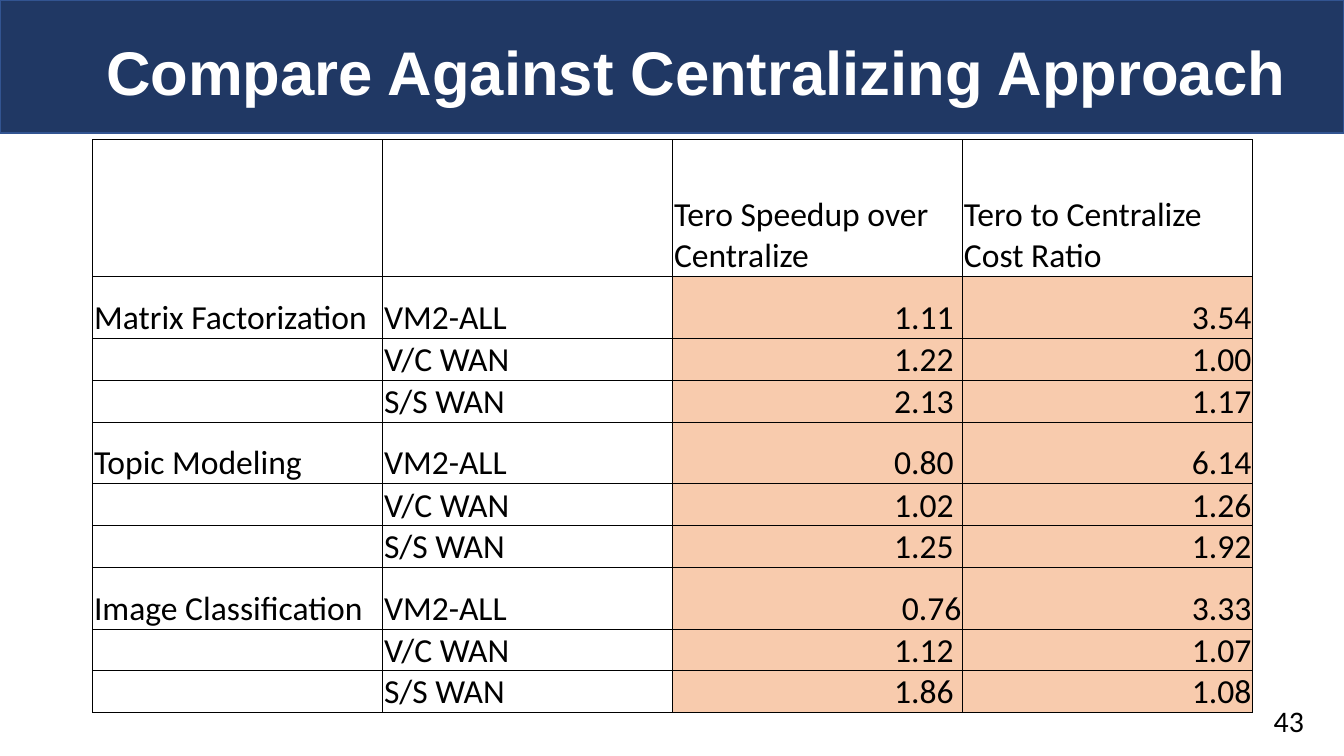
from lxml import etree
from pptx import Presentation
from pptx.dml.color import RGBColor
from pptx.enum.shapes import MSO_SHAPE
from pptx.enum.text import MSO_ANCHOR, PP_ALIGN
from pptx.oxml.ns import qn
from pptx.util import Inches, Pt

RECT = MSO_SHAPE.RECTANGLE
MIDDLE, BOTTOM = MSO_ANCHOR.MIDDLE, MSO_ANCHOR.BOTTOM
LEFT, RIGHT = PP_ALIGN.LEFT, PP_ALIGN.RIGHT

WIDE = 10
HIGH = WIDE * 9 / 16
EDGE = 0.69
COL, HEAD, TALL, LOW = 8.63 / 4, 1.02, 0.46, 0.31
COLOURS = {"navy": "203864", "line": "325491", "white": "FFFFFF",
           "black": "000000", "peach": "F8CBAD"}

HEADS = ["", "", "Tero Speedup over Centralize", "Tero to Centralize Cost Ratio"]
SETUPS = ["VM2-ALL", "V/C WAN", "S/S WAN"]
RESULTS = {
    "Matrix Factorization": [(" 1.11 ", "3.54"), (" 1.22 ", "1.00"), (" 2.13 ", "1.17")],
    "Topic Modeling": [(" 0.80 ", "6.14"), (" 1.02 ", "1.26"), (" 1.25 ", "1.92")],
    "Image Classification": [("0.76", "3.33"), (" 1.12 ", "1.07"), (" 1.86 ", "1.08")],
}


def colour(name):
    return RGBColor.from_string(COLOURS[name])


def box(*sides):
    return [Inches(side) for side in sides]


def style(frame, size, font, ink, align=LEFT, bold=False):
    for para in frame.paragraphs:
        para.alignment = align
        for run in para.runs:
            run.font.size = Pt(size)
            run.font.name = font
            run.font.bold = bold
            run.font.color.rgb = colour(ink)


def add_banner(slide):
    """Draw the band across the top, behind the title."""
    banner = slide.shapes.add_shape(RECT, *box(0, 0, WIDE, 0.99))
    banner.shadow.inherit = False
    banner.fill.solid()
    banner.fill.fore_color.rgb = colour("navy")
    banner.line.color.rgb = colour("line")
    banner.line.width = Pt(1)
    slide.shapes.title.element.addprevious(banner.element)


def set_title(slide, text):
    title = slide.shapes.title
    title.left, title.top, title.width, title.height = box(EDGE, 0.13, 9.11, 0.86)
    frame = title.text_frame
    frame.text = text
    frame.vertical_anchor = MIDDLE
    frame.paragraphs[0].line_spacing = 0.9
    style(frame, 33, "Arial", "white", bold=True)


def add_number(slide, text):
    frame = slide.shapes.add_textbox(*box(7.55, 5.21, 2.25, 0.3)).text_frame
    frame.word_wrap = True
    frame.vertical_anchor = MIDDLE
    frame.text = text
    style(frame, 16, "Calibri", "black", RIGHT)


def add_borders(cell):
    props = cell._tc.get_or_add_tcPr()
    for place, side in enumerate(("lnL", "lnR", "lnT", "lnB")):
        line = etree.Element(qn(f"a:{side}"), w=str(Pt(0.5)))
        fill = etree.SubElement(line, qn("a:solidFill"))
        etree.SubElement(fill, qn("a:srgbClr"), val=COLOURS["black"])
        props.insert(place, line)


def fill_cell(cell, text, value):
    cell.margin_left = cell.margin_right = cell.margin_top = Inches(0.01)
    cell.margin_bottom = 0
    cell.vertical_anchor = BOTTOM
    if value:
        cell.fill.solid()
        cell.fill.fore_color.rgb = colour("peach")
    else:
        cell.fill.background()
    add_borders(cell)
    cell.text_frame.text = text
    style(cell.text_frame, 18, "Calibri", "black", RIGHT if value else LEFT)


def add_results(slide):
    rows, heights = [HEADS], [HEAD]
    for task, pairs in RESULTS.items():
        for i, (setup, pair) in enumerate(zip(SETUPS, pairs)):
            rows.append(["" if i else task, setup, *pair])
            heights.append(LOW if i else TALL)
    area = box(EDGE, 1.04, COL * len(HEADS), sum(heights))
    table = slide.shapes.add_table(len(rows), len(HEADS), *area).table
    table.first_row = table.horz_banding = False
    for col in table.columns:
        col.width = Inches(COL)
    for r, (row, height) in enumerate(zip(rows, heights)):
        table.rows[r].height = Inches(height)
        for c, text in enumerate(row):
            fill_cell(table.cell(r, c), text, r > 0 and c > 1)


def main():
    deck = Presentation()
    deck.slide_width, deck.slide_height = box(WIDE, HIGH)
    slide = deck.slides.add_slide(deck.slide_layouts[5])
    add_banner(slide)
    set_title(slide, "Compare Against Centralizing Approach")
    add_number(slide, "43")
    add_results(slide)
    deck.save("out.pptx")


if __name__ == "__main__":
    main()
